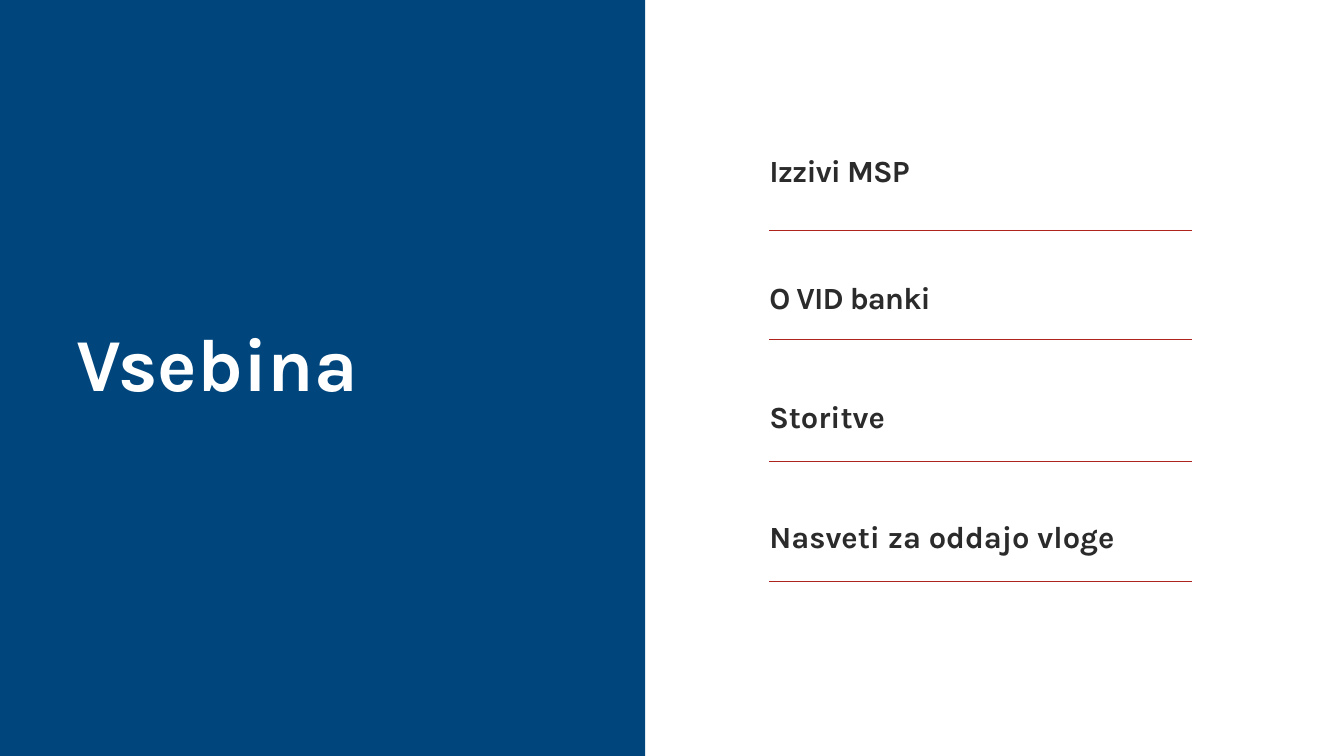
from dataclasses import dataclass

from lxml.etree import SubElement
from pptx import Presentation
from pptx.dml.color import RGBColor
from pptx.enum.shapes import MSO_CONNECTOR, MSO_SHAPE
from pptx.enum.text import MSO_ANCHOR, MSO_AUTO_SIZE, PP_ALIGN
from pptx.oxml.ns import qn
from pptx.slide import Slide
from pptx.util import Inches, Pt

BLUE, RED, DARK, WHITE = "00467D", "AF231E", "2B2B2B", "FFFFFF"
AGENDA_LEFT, AGENDA_WIDTH = 7.63, 4.19


@dataclass
class AgendaItem:
    text: str
    top: float
    rule_top: float
    spacing: float = 0


AGENDA = [
    AgendaItem("Izzivi MSP", 1.53, 2.29, -0.6),
    AgendaItem("O VID banki", 2.79, 3.37, -0.6),
    AgendaItem("Storitve", 3.97, 4.58),
    AgendaItem("Nasveti za oddajo vloge", 5.17, 5.77),
]


def color(value: str) -> RGBColor:
    return RGBColor.from_string(value)


def place(shape, left: float, top: float, width: float, height: float) -> None:
    shape.left, shape.top = Inches(left), Inches(top)
    shape.width, shape.height = Inches(width), Inches(height)


def write(shape, text: str, *, size: float, line_height: float,
          text_color: str, spacing: float = 0) -> None:
    """Fill a shape with one bold line; sizes and letter spacing are in points."""
    frame = shape.text_frame
    frame.word_wrap = True
    frame.auto_size = MSO_AUTO_SIZE.NONE
    frame.vertical_anchor = MSO_ANCHOR.TOP
    frame.margin_left = frame.margin_right = 0
    frame.margin_top = frame.margin_bottom = 0
    paragraph = frame.paragraphs[0]
    paragraph.alignment = PP_ALIGN.LEFT
    paragraph.line_spacing = Pt(line_height)
    paragraph.space_before = Pt(0)
    run = paragraph.add_run()
    run.text = text
    run.font.name = "Karla"
    run.font.size = Pt(size)
    run.font.bold = True
    run.font.color.rgb = color(text_color)
    if spacing:
        run._r.get_or_add_rPr().set("spc", str(round(spacing * 100)))


def add_panel(slide: Slide) -> None:
    """Add the blue left half behind everything else."""
    panel = slide.shapes.add_shape(
        MSO_SHAPE.RECTANGLE, 0, 0, Inches(6.4), Inches(7.5))
    panel.shadow.inherit = False
    panel.fill.solid()
    panel.fill.fore_color.rgb = color(BLUE)
    panel.line.fill.background()
    slide.shapes._spTree.insert(2, panel._element)


def add_title(slide: Slide) -> None:
    title = slide.shapes.title
    place(title, 0.76, 2.99, 4.87, 0.94)
    write(title, "Vsebina", size=53.3, line_height=74.7, text_color=WHITE)


def add_agenda_item(slide: Slide, item: AgendaItem) -> None:
    label = slide.shapes.add_textbox(
        Inches(AGENDA_LEFT), Inches(item.top), Inches(AGENDA_WIDTH), Inches(0.64))
    write(label, item.text, size=22, line_height=24.3,
          text_color=DARK, spacing=item.spacing)
    rule = slide.shapes.add_connector(
        MSO_CONNECTOR.STRAIGHT, Inches(AGENDA_LEFT), Inches(item.rule_top),
        Inches(AGENDA_LEFT + AGENDA_WIDTH), Inches(item.rule_top))
    rule.line.color.rgb = color(RED)
    rule.line.width = Pt(0.75)
    SubElement(rule._element.spPr, qn("a:effectLst"))


def main() -> None:
    presentation = Presentation()
    presentation.slide_width = Inches(13.33)
    presentation.slide_height = Inches(7.5)
    slide = presentation.slides.add_slide(presentation.slide_layouts[5])
    add_panel(slide)
    add_title(slide)
    for item in AGENDA:
        add_agenda_item(slide, item)
    presentation.save("out.pptx")


if __name__ == "__main__":
    main()
